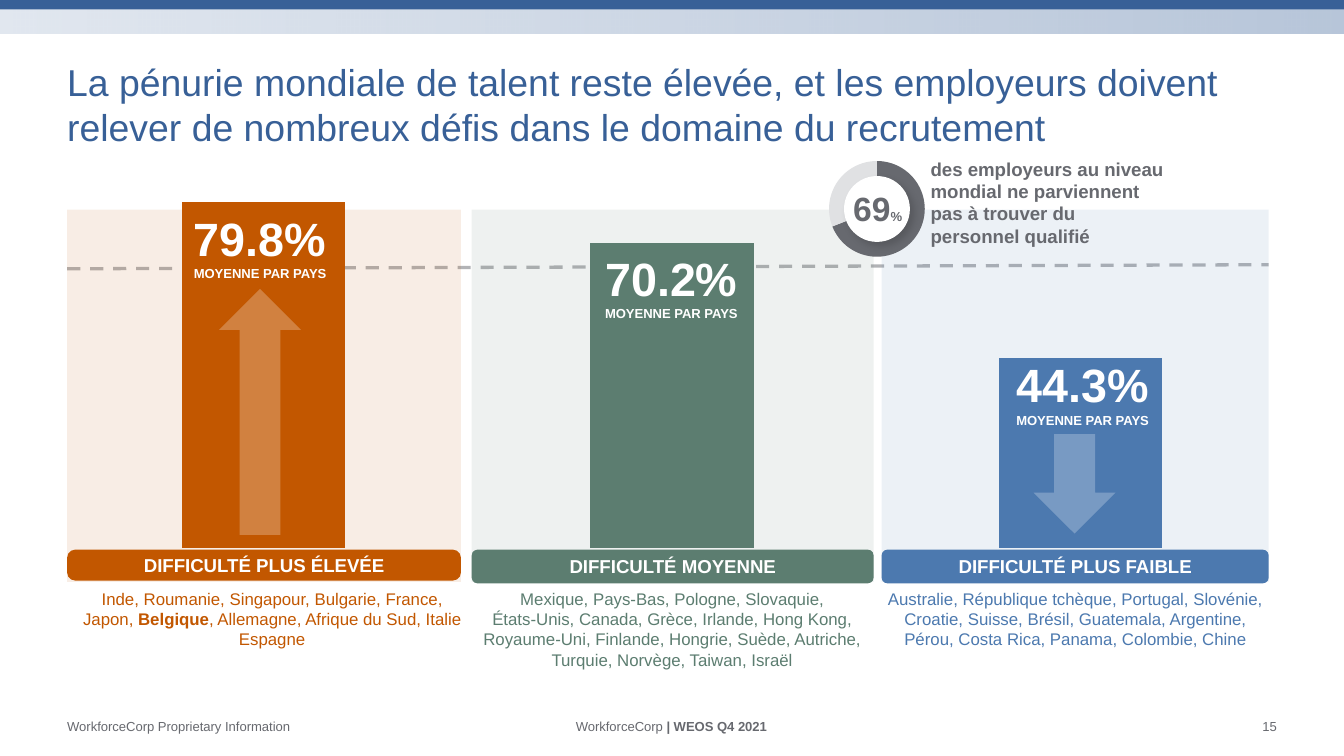
"""Build the talent shortage slide with its three difficulty groups."""
from lxml import etree
from pptx import Presentation
from pptx.chart.data import CategoryChartData
from pptx.dml.color import RGBColor
from pptx.enum import chart as charts, dml, shapes, text
from pptx.oxml import parse_xml
from pptx.oxml.ns import nsdecls, qn
from pptx.util import Inches, Pt


class Theme:
    font = "Arial"
    navy, grey, pale, white = "386097", "67696F", "E0E1E3", "FFFFFF"
    orange, green, blue = "C25700", "5C7D70", "4C79AF"
    title, share, figure, label, body, small = 20, 18, 25, 10, 9, 7


def fade(element, *opacities):
    for color, opacity in zip(element.iter(qn("a:srgbClr")), opacities):
        etree.SubElement(color, qn("a:alpha"), val=str(opacity * 1000))


def place(kind, at, fill=None, opacity=100, runs=(), color=Theme.white, align="CENTER", anchor="MIDDLE", wrap=True):
    bounds = [Inches(length) for length in at]
    if kind:
        part = slide.shapes.add_shape(kind, *bounds)
        part.shadow.inherit = False
        part.line.fill.background()
        if fill:
            part.fill.solid()
            part.fill.fore_color.rgb = RGBColor.from_string(fill)
            if opacity < 100:
                fade(part._element, opacity)
        else:
            part.fill.background()
    else:
        part = slide.shapes.add_textbox(*bounds)
    frame = part.text_frame
    layout = dict(margin_left=0, margin_right=0, margin_top=0, margin_bottom=0, word_wrap=wrap,
                  vertical_anchor=text.MSO_ANCHOR[anchor])
    for name, value in layout.items():
        setattr(frame, name, value)
    paragraph = frame.paragraphs[0]
    paragraph.alignment = text.PP_ALIGN[align]
    for words, size, bold in runs:
        for number, row in enumerate(words.split("\n")):
            if number:
                paragraph.add_line_break()
            if row:
                run = paragraph.add_run()
                run.text = row
                for name, value in dict(name=Theme.font, size=Pt(size), bold=bold).items():
                    setattr(run.font, name, value)
                run.font.color.rgb = RGBColor.from_string(color)
    return part


Shape = shapes.MSO_SHAPE
deck = Presentation()
deck.slide_width, deck.slide_height = Inches(10), Inches(10) * 9 // 16
slide = deck.slides.add_slide(deck.slide_layouts[5])

title = slide.shapes.title
for name, value in dict(left=0.5, top=0.18, width=9, height=1.19).items():
    setattr(title, name, Inches(value))
heading = title.text_frame
heading.text = ("La pénurie mondiale de talent reste élevée, et les employeurs doivent "
                "relever de nombreux défis dans le domaine du recrutement")
for name, value in dict(margin_left=0, margin_right=0, margin_top=0, margin_bottom=0, word_wrap=True,
                        vertical_anchor=text.MSO_ANCHOR.MIDDLE, auto_size=text.MSO_AUTO_SIZE.NONE).items():
    setattr(heading, name, value)
heading.paragraphs[0].alignment = text.PP_ALIGN.LEFT
for name, value in dict(name=Theme.font, size=Pt(Theme.title), bold=False).items():
    setattr(heading.paragraphs[0].runs[0].font, name, value)
heading.paragraphs[0].runs[0].font.color.rgb = RGBColor.from_string(Theme.navy)

band = place(Shape.RECTANGLE, (0, 0, 10, 0.25), Theme.navy)
band.fill.gradient()
band.fill.gradient_angle = 0
for stop in band.fill.gradient_stops:
    stop.color.rgb = RGBColor.from_string(Theme.navy)
fade(band._element, 15, 36)
place(Shape.RECTANGLE, (0, 0, 10, 0.07), Theme.navy)

footers = [
    (0.5, 1.95, "LEFT", [("WorkforceCorp Proprietary Information", Theme.small, False)]),
    (3.72, 2.55, "CENTER", [("WorkforceCorp ", Theme.small, False), ("| WEOS Q4 2021", Theme.small, True)]),
    (8.72, 0.78, "RIGHT", [("15", Theme.small, False)]),
]
for left, width, align, runs in footers:
    place(None, (left, 5.34, width, 0.12), runs=runs, color=Theme.grey, align=align)

average = slide.shapes.add_connector(shapes.MSO_CONNECTOR.STRAIGHT, Inches(0.5), Inches(2), Inches(9.44), Inches(1.97))
average.line.color.rgb = RGBColor.from_string(Theme.grey)
average.line.width = Pt(1.75)
average.line.dash_style = dml.MSO_LINE.DASH
fade(average._element, 50)
etree.SubElement(average._element.spPr, qn("a:effectLst"))

plots = [
    (charts.XL_CHART_TYPE.COLUMN_STACKED, (0.25, 1.11, 9.5, 3.03), (100, 88, 55),
     (Theme.orange, Theme.green, Theme.blue), (0.02, 0.13, 0.96, 0.85)),
    (charts.XL_CHART_TYPE.PIE, (6.03, 1.06, 0.99, 0.99), (69, 31),
     (Theme.grey, Theme.pale), (0.14, 0.14, 0.72, 0.72)),
]
graphs = []
for kind, at, values, colors, inner in plots:
    data = CategoryChartData()
    data.categories = [str(number + 1) for number in range(len(values))]
    data.add_series("Series 1", values)
    holder = slide.shapes.add_chart(kind, *[Inches(length) for length in at], data)
    graph = holder.chart
    graph.has_legend = graph.has_title = False
    graph.font.name, graph.font.size = Theme.font, Pt(Theme.label)
    graph.font.color.rgb = RGBColor.from_string(Theme.navy)
    graph.plots[0].vary_by_categories = False
    for number, color in enumerate(colors):
        point = graph.plots[0].series[0].points[number]
        point.format.fill.solid()
        point.format.fill.fore_color.rgb = RGBColor.from_string(color)
        point.format.line.fill.background()
    area = graph._chartSpace.chart.plotArea
    for old in area.findall(qn("c:layout")):
        area.remove(old)
    edges = "".join(f'<c:{tag} val="{value}"/>' for tag, value in zip("xywh", inner))
    area.insert(0, parse_xml(
        f'<c:layout {nsdecls("c")}><c:manualLayout><c:layoutTarget val="inner"/>'
        f'<c:xMode val="edge"/><c:yMode val="edge"/>{edges}</c:manualLayout></c:layout>'))
    graphs.append((holder, graph))

columns = graphs[0][1]
columns.plots[0].series[0].format.fill.solid()
columns.plots[0].series[0].format.fill.fore_color.rgb = RGBColor.from_string(Theme.green)
columns.plots[0].gap_width, columns.plots[0].overlap = 150, 100
columns.value_axis.minimum_scale, columns.value_axis.maximum_scale = 0, 100
columns.value_axis.has_major_gridlines = False
columns.value_axis.visible = columns.category_axis.visible = False

groups = [
    (0.5, 2.93, 0.23, Theme.orange, "DIFFICULTÉ PLUS ÉLEVÉE", 1.33, 1.56, "79.8%", 0.56, 2.93, 0.45,
     [("Inde, Roumanie, Singapour, Bulgarie, France, Japon, ", Theme.body, False), ("Belgique", Theme.body, True),
      (", Allemagne, Afrique du Sud, Italie Espagne", Theme.body, False)]),
    (3.51, 2.99, 0.25, Theme.green, "DIFFICULTÉ MOYENNE", 4.39, 1.86, "70.2%", 3.56, 2.88, 0.61,
     [("Mexique, Pays-Bas, Pologne, Slovaquie,\nÉtats-Unis, Canada, Grèce, Irlande, Hong Kong, "
       "Royaume-Uni, Finlande, Hongrie, Suède, Autriche, Turquie, Norvège, Taiwan, Israël", Theme.body, False)]),
    (6.56, 2.88, 0.25, Theme.blue, "DIFFICULTÉ PLUS FAIBLE", 7.45, 2.65, "44.3%", 6.56, 2.88, 0.45,
     [("Australie, République tchèque, Portugal, Slovénie, Croatie, Suisse, Brésil, Guatemala, Argentine, "
       "Pérou, Costa Rica, Panama, Colombie, Chine", Theme.body, False)]),
]
for (left, width, height, color, level, rate_left, rate_top, rate,
     list_left, list_width, list_height, countries) in groups:
    place(Shape.RECTANGLE, (left, 1.56, width, 2.77), color, 10)
    banner = place(Shape.ROUNDED_RECTANGLE, (left, 4.09, width, height), color, runs=[(level, Theme.label, True)])
    banner.adjustments[0] = 0.26 if color == Theme.orange else 0.17
    place(None, (list_left, 4.38, list_width, list_height), runs=countries, color=color, anchor="TOP")
    place(None, (rate_left, rate_top, 1.21, 0.54), anchor="TOP",
          runs=[(rate + "\n", Theme.figure, True), ("MOYENNE PAR PAYS", Theme.small, True)])

claim = place(Shape.ROUNDED_RECTANGLE, (6.92, 1.22, 1.74, 0.57), color=Theme.grey, align="LEFT", runs=[
    ("des employeurs au niveau mondial ne parviennent pas à trouver du personnel qualifié", Theme.label, True)])
claim.adjustments[0] = 0.03
slide.shapes._spTree.append(graphs[1][0]._element)
hole = place(Shape.OVAL, (6.28, 1.31, 0.49, 0.49), Theme.white)
hole._element.spPr.find(qn("a:effectLst")).append(parse_xml(
    f'<a:outerShdw {nsdecls("a")} blurRad="{Pt(4)}" dist="{Pt(3)}" dir="2700000" algn="tl" rotWithShape="0">'
    '<a:srgbClr val="000000"><a:alpha val="15000"/></a:srgbClr></a:outerShdw>'))
place(None, (6.34, 1.4, 0.38, 0.3), color=Theme.grey, anchor="TOP", wrap=False,
      runs=[("69", Theme.share, True), ("%", Theme.small, True)])

for at, turn in (((1.63, 2.15, 0.61, 1.83), 0), ((7.69, 3.23, 0.61, 0.74), 180)):
    place(Shape.UP_ARROW, at, Theme.white, 25).rotation = turn

deck.save("out.pptx")
